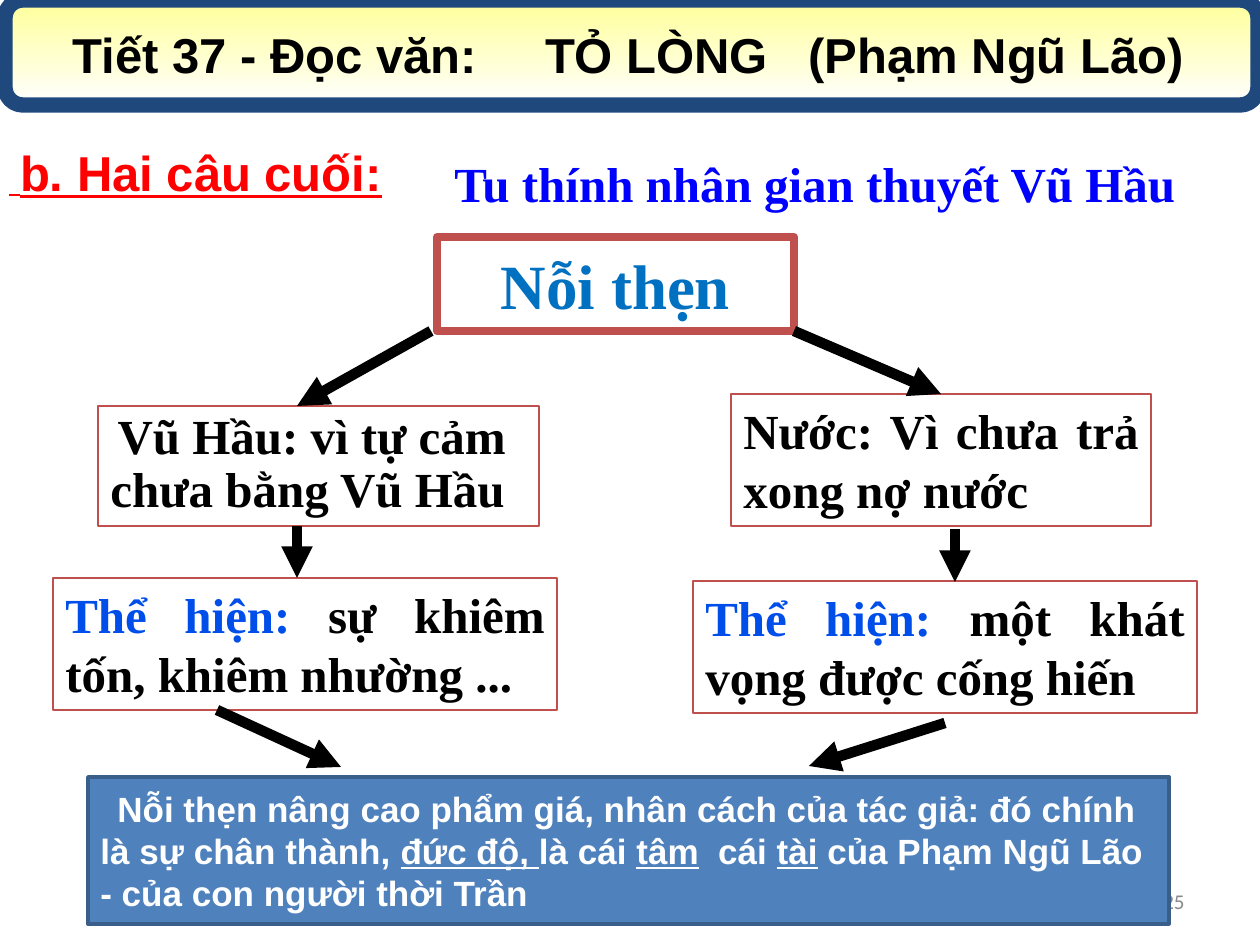
import pptx
import pptx.util
import pptx.dml.color
import pptx.enum.shapes
import pptx.enum.text
import pptx.oxml
import pptx.oxml.ns

SCALE = 914400 / 126
SHAPE = pptx.enum.shapes.MSO_SHAPE
ALIGN = pptx.enum.text.PP_ALIGN
ANCHOR = pptx.enum.text.MSO_ANCHOR
FIT = pptx.enum.text.MSO_AUTO_SIZE
SERIF = {"name": "Times New Roman", "size": 28, "bold": True, "color": "000000"}
SANS = {"name": "Arial", "size": 28, "bold": True, "color": "000000"}
JUSTIFIED = {"alignment": ALIGN.JUSTIFY}
CENTERED = {"alignment": ALIGN.CENTER}
MIDDLE = {"vertical_anchor": ANCHOR.MIDDLE}
GROWING = {"vertical_anchor": ANCHOR.TOP, "auto_size": FIT.SHAPE_TO_FIT_TEXT}


def px(length):
    return pptx.util.Emu(round(length * SCALE))


def color(value):
    return pptx.dml.color.RGBColor.from_string(value)


def apply(target, values):
    for name, value in values.items():
        setattr(target, name, value)


def write(box, spans, para_format, frame_format):
    frame = box.text_frame
    apply(frame, {"word_wrap": True, **frame_format})
    para = frame.paragraphs[0]
    apply(para, {"alignment": ALIGN.LEFT, **para_format})
    for text, style in spans:
        span = para.add_run()
        span.text = text
        values = dict(style)
        span.font.color.rgb = color(values.pop("color"))
        values["size"] = pptx.util.Pt(values["size"])
        apply(span.font, values)
    return para


def add_label(page, place, spans, para_format, frame_format):
    box = page.shapes.add_textbox(*map(px, place))
    write(box, spans, para_format, frame_format)


def add_panel(page, place, line, width, fill=None, kind=SHAPE.RECTANGLE):
    panel = page.shapes.add_shape(kind, *map(px, place))
    panel.shadow.inherit = False
    panel.line.color.rgb = color(line)
    panel.line.width = pptx.util.Pt(width)
    if fill:
        panel.fill.solid()
        panel.fill.fore_color.rgb = color(fill)
    else:
        panel.fill.background()
    return panel


def add_outlined(page, place, spans, para_format, frame_format=GROWING, width=0.75):
    panel = add_panel(page, place, "C0504D", width)
    write(panel, spans, para_format, frame_format)
    return panel


def add_arrow(page, start, end):
    arrow = page.shapes.add_connector(
        pptx.enum.shapes.MSO_CONNECTOR.STRAIGHT, *map(px, start + end))
    arrow.line.color.rgb = color("000000")
    arrow.line.width = pptx.util.Pt(6)
    head = pptx.oxml.parse_xml(
        '<a:tailEnd %s type="triangle"/>' % pptx.oxml.ns.nsdecls("a"))
    arrow.line._get_or_add_ln().append(head)
    arrow._element.spPr.append(
        pptx.oxml.parse_xml("<a:effectLst %s/>" % pptx.oxml.ns.nsdecls("a")))
    return arrow


def add_banner(page):
    banner = add_panel(page, (5, 0, 1253, 105), "1F497D", 8.75,
                       kind=SHAPE.ROUNDED_RECTANGLE)
    banner.adjustments[0] = 0.17
    banner.fill.gradient()
    banner.fill.gradient_angle = 270
    for stop, value, position in zip(
            banner.fill.gradient_stops, ("FFFF99", "FFFFFF"), (0, 1)):
        stop.color.rgb = color(value)
        stop.position = position
    add_label(page, (-3, 24, 1263, 59),
              [("Tiết 37 - Đọc văn:     TỎ LÒNG   (Phạm Ngũ Lão)", SANS)],
              CENTERED, MIDDLE)


def add_conclusion(page):
    panel = add_panel(page, (88, 777, 1081, 147), "395E89", 2, "4F81BD")
    plain = {**SANS, "size": 20, "color": "FFFFFF"}
    marked = {**plain, "underline": True}
    para = write(panel, [
        ("Nỗi thẹn nâng cao phẩm giá, nhân cách của tác giả: "
         "đó chính là sự chân thành, ", plain),
        ("đức độ, ", marked),
        ("là cái ", plain),
        ("tâm", marked),
        ("  cái ", plain),
        ("tài", marked),
        (" của Phạm Ngũ Lão - của con người thời Trần", plain),
    ], {}, MIDDLE)
    para._p.get_or_add_pPr().set("indent", str(px(17)))


def main():
    deck = pptx.Presentation()
    apply(deck, {"slide_width": px(1260), "slide_height": px(945)})
    page = deck.slides.add_slide(deck.slide_layouts[6])

    number = {"name": "Calibri", "size": 12, "color": "888888"}
    add_label(page, (903, 876, 294, 50), [("25", number)],
              {"alignment": ALIGN.RIGHT}, MIDDLE)
    add_outlined(page, (437, 237, 357, 94),
                 [("Nỗi thẹn", {**SERIF, "size": 36, "color": "0070C0"})],
                 CENTERED, MIDDLE, 4.5)
    add_outlined(page, (98, 406, 441, 120),
                 [(" ", {"name": "Calibri", "size": 18, "color": "000000"}),
                  ("Vũ Hầu: vì tự cảm chưa bằng Vũ Hầu", SERIF)],
                 {"line_spacing": 0.9})
    country = add_outlined(page, (731, 394, 420, 132),
                           [("Nước: Vì chưa trả xong nợ nước", SERIF)], JUSTIFIED)
    for left, top, text in ((53, 578, "sự khiêm tốn, khiêm nhường ..."),
                            (693, 581, "một khát vọng được cống hiến")):
        add_outlined(page, (left, top, 504, 132),
                     [("Thể hiện: ", {**SERIF, "color": "004EEA"}), (text, SERIF)],
                     JUSTIFIED)

    for start, end in (((431, 331), (297, 406)),
                       ((955, 529), (955, 582)),
                       ((217, 710), (341, 767)),
                       ((945, 723), (809, 766)),
                       ((297, 526), (297, 578))):
        add_arrow(page, start, end)
    add_arrow(page, (794, 331), (941, 394)).end_connect(country, 0)

    add_conclusion(page)
    add_banner(page)
    heading = {**SANS, "color": "FF0000", "underline": True}
    add_label(page, (-3, 136, 431, 72),
              [(" ", {**heading, "size": 22}), ("b. Hai câu cuối:", heading)],
              {}, GROWING)
    add_label(page, (442, 147, 755, 72),
              [("Tu thính nhân gian thuyết Vũ Hầu", {**SERIF, "color": "0000FF"})],
              {}, GROWING)
    deck.save("out.pptx")


if __name__ == "__main__":
    main()
